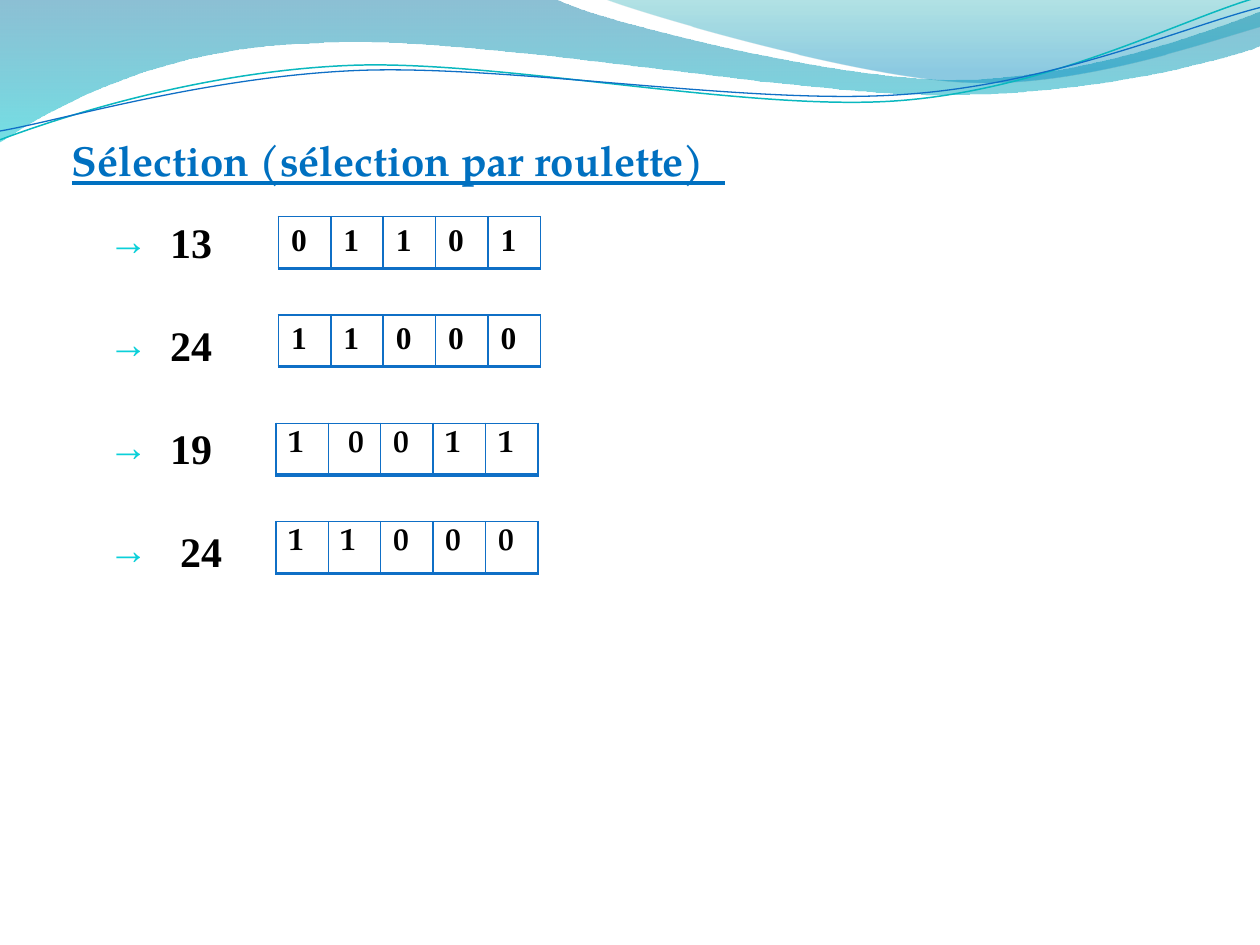
from lxml.etree import SubElement
from pptx import Presentation
from pptx.dml.color import RGBColor
from pptx.enum.text import MSO_AUTO_SIZE, MSO_UNDERLINE, PP_ALIGN
from pptx.oxml.ns import qn
from pptx.util import Inches, Pt

SERIF, TIMES = "TeX Gyre Pagella", "Times New Roman"
BLUE = "0F6FC6"

# Content
HEADING = "Sélection (sélection par roulette)  "
# number, left margin of the number
ITEMS = [("13", 0.78), ("24", 0.78), ("19", 0.78), ("24", 0.86)]
BULLET_LEFT = 0.29
# left, top, font, bits
CHROMOSOMES = [
    (2.21, 1.72, TIMES, ["0", "1", "1", "0", "1"]),
    (2.21, 2.50, TIMES, ["1", "1", "0", "0", "0"]),
    (2.19, 3.36, SERIF, ["1", " 0", "0", "1", "1"]),
    (2.19, 4.14, SERIF, ["1", "1", "0", "0", "0"]),
]
TABLE_W, ROW_H = 2.08, 0.41

# Waves: a step of one point is a line, a step of three a Bezier curve
BANDS = [
    ([[(0, 0)], [(4.4, -0.01)],
      [(4.76, 0.17), (6.64, 0.63), (7.58, 0.63)],
      [(8.53, 0.63), (9.58, 0.26), (10, 0.09)], [(10.01, 0.36)],
      [(9.83, 0.44), (8.7, 0.76), (7.46, 0.75)],
      [(6.22, 0.75), (3.82, 0.28), (2.57, 0.34)],
      [(1.29, 0.36), (0.46, 0.83), (-0.01, 1.13)]],
     [(0, "0074A1", 45), (1, "00C6CF", 55)]),
    ([[(4.79, -0.01)],
      [(5.09, 0.11), (6.82, 0.62), (7.69, 0.65)],
      [(8.56, 0.69), (9.61, 0.32), (10, 0.21)], [(10, 0)]],
     [(0, "00A1A9", 30), (0.8, "008BBF", 45)]),
]
STRANDS = [
    ([[(0, 1.11)],
      [(0.48, 0.93), (1.58, 0.57), (2.77, 0.52)],
      [(3.95, 0.47), (5.93, 0.89), (7.13, 0.8)],
      [(8.33, 0.71), (9.38, 0.15), (9.98, -0.02)]], "0AB8BF", 0.85),
    ([[(0, 1.04)],
      [(0.47, 0.96), (1.64, 0.61), (2.83, 0.56)],
      [(4.03, 0.51), (5.97, 0.84), (7.17, 0.75)],
      [(8.36, 0.67), (9.41, 0.21), (10, 0.06)]], BLUE, 0.75),
]


def rgb(color):
    return RGBColor.from_string(color)


def add_wave(s, steps, close):
    """Build the outline, then join each three-point step into one curve."""
    first, *rest = [(Inches(x), Inches(y)) for step in steps for x, y in step]
    builder = s.shapes.build_freeform(*first)
    builder.add_line_segments(rest, close=close)
    sp = builder.convert_to_shape()
    sp.shadow.inherit = False
    lines = iter(list(sp._element.iter(qn("a:lnTo"))))
    for step in steps[1:]:
        start, *others = [next(lines) for _ in step]
        if others:
            curve = start.makeelement(qn("a:cubicBezTo"))
            start.addprevious(curve)
            for line in (start, *others):
                curve.append(line[0])
                line.getparent().remove(line)
    return sp


def add_run(p, text, font, size, color, underline=None):
    r = p.add_run()
    r.text = text
    r.font.name, r.font.size = font, Pt(size)
    r.font.bold, r.font.underline = True, underline
    r.font.color.rgb = rgb(color)


def set_bullet(p, left, hanging, char=None):
    pPr = p._p.get_or_add_pPr()
    pPr.set("marL", str(Inches(left)))
    pPr.set("indent", str(Inches(-hanging)))
    if char is None:
        SubElement(pPr, qn("a:buNone"))
        return
    color = SubElement(pPr, qn("a:buClr"))
    SubElement(color, qn("a:srgbClr"), val="0BD0D9")
    SubElement(pPr, qn("a:buSzPct"), val="95000")
    SubElement(pPr, qn("a:buFont"), typeface=TIMES)
    SubElement(pPr, qn("a:buChar"), char=char)


def set_borders(cell):
    tcPr = cell._tc.get_or_add_tcPr()
    for side, width in (("L", 1), ("R", 1), ("T", 1), ("B", 2)):
        ln = SubElement(tcPr, qn(f"a:ln{side}"), w=str(Pt(width)))
        SubElement(SubElement(ln, qn("a:solidFill")), qn("a:srgbClr"), val=BLUE)


prs = Presentation()
prs.slide_width, prs.slide_height = Inches(10), Inches(7.5)
s = prs.slides.add_slide(prs.slide_layouts[1])
title = s.shapes.title
title._element.getparent().remove(title._element)
body = s.placeholders[1]

# Waves at the top
for steps, stops in BANDS:
    sp = add_wave(s, steps, True)
    sp.line.fill.background()
    sp.fill.gradient()
    sp.fill.gradient_angle = 270
    for stop, (position, color, opacity) in zip(sp.fill.gradient_stops, stops):
        stop.position = position
        stop.color.rgb = rgb(color)
        clr = stop._gs.find(qn("a:srgbClr"))
        SubElement(clr, qn("a:alpha"), val=str(opacity * 1000))
for steps, color, width in STRANDS:
    sp = add_wave(s, steps, False)
    sp.fill.background()
    sp.line.color.rgb = rgb(color)
    sp.line.width = Pt(width)

# Heading and list
body.left, body.top = Inches(0.47), Inches(1.02)
body.width, body.height = Inches(9), Inches(6.09)
tf = body.text_frame
tf.auto_size = MSO_AUTO_SIZE.NONE
p = tf.paragraphs[0]
p.alignment = PP_ALIGN.JUSTIFY
p.space_before, p.space_after = Pt(0), Pt(12)
set_bullet(p, 0.3, 0.3)
add_run(p, HEADING, SERIF, 24, "0070C0", MSO_UNDERLINE.HEAVY_LINE)
for number, left in ITEMS:
    p = tf.add_paragraph()
    p.alignment = PP_ALIGN.JUSTIFY
    p.space_before, p.space_after = Pt(6), Pt(24)
    set_bullet(p, left, left - BULLET_LEFT, "→")
    add_run(p, number, TIMES, 24, "000000")

# One table of bits per chromosome
for left, top, font, bits in CHROMOSOMES:
    table = s.shapes.add_table(1, len(bits), Inches(left), Inches(top),
                               Inches(TABLE_W), Inches(ROW_H)).table
    table.first_row = table.horz_banding = False
    for cell, bit in zip(table.rows[0].cells, bits):
        set_borders(cell)
        cell.fill.background()
        add_run(cell.text_frame.paragraphs[0], bit, font, 18, "000000")

prs.save("out.pptx")
